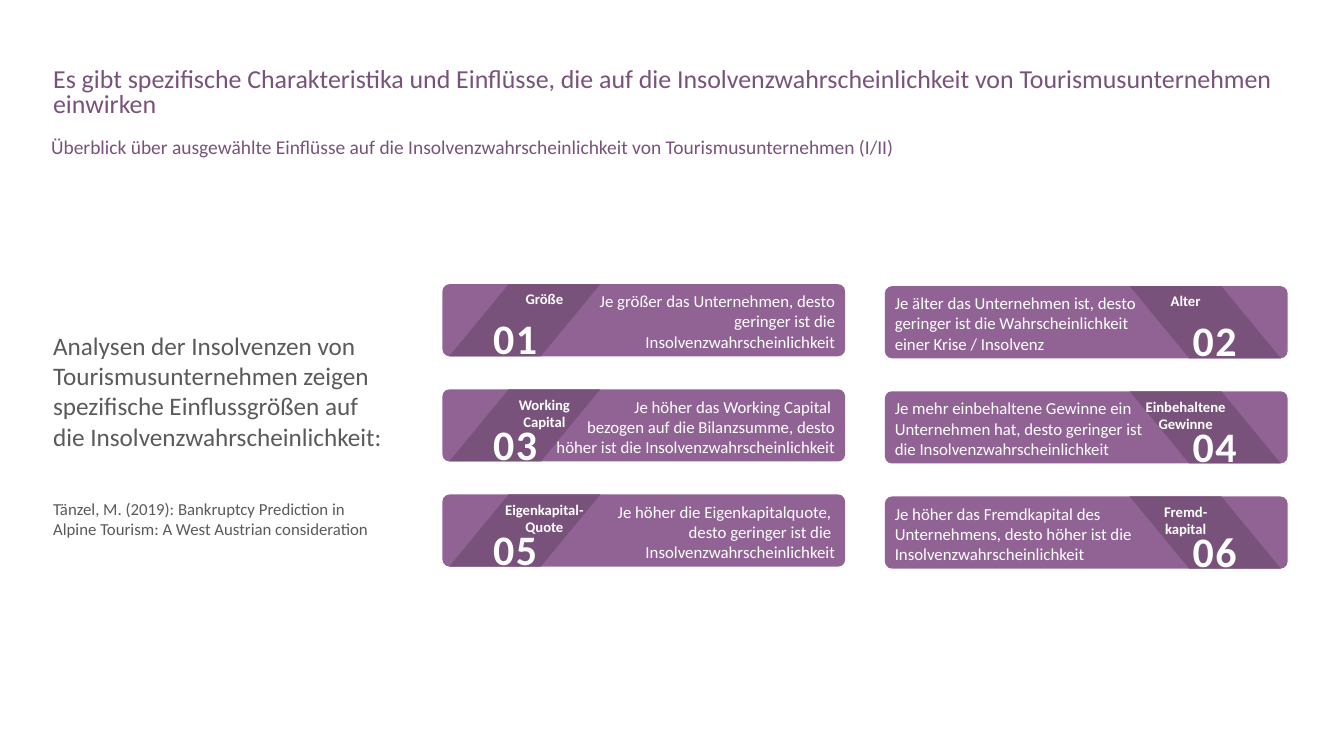
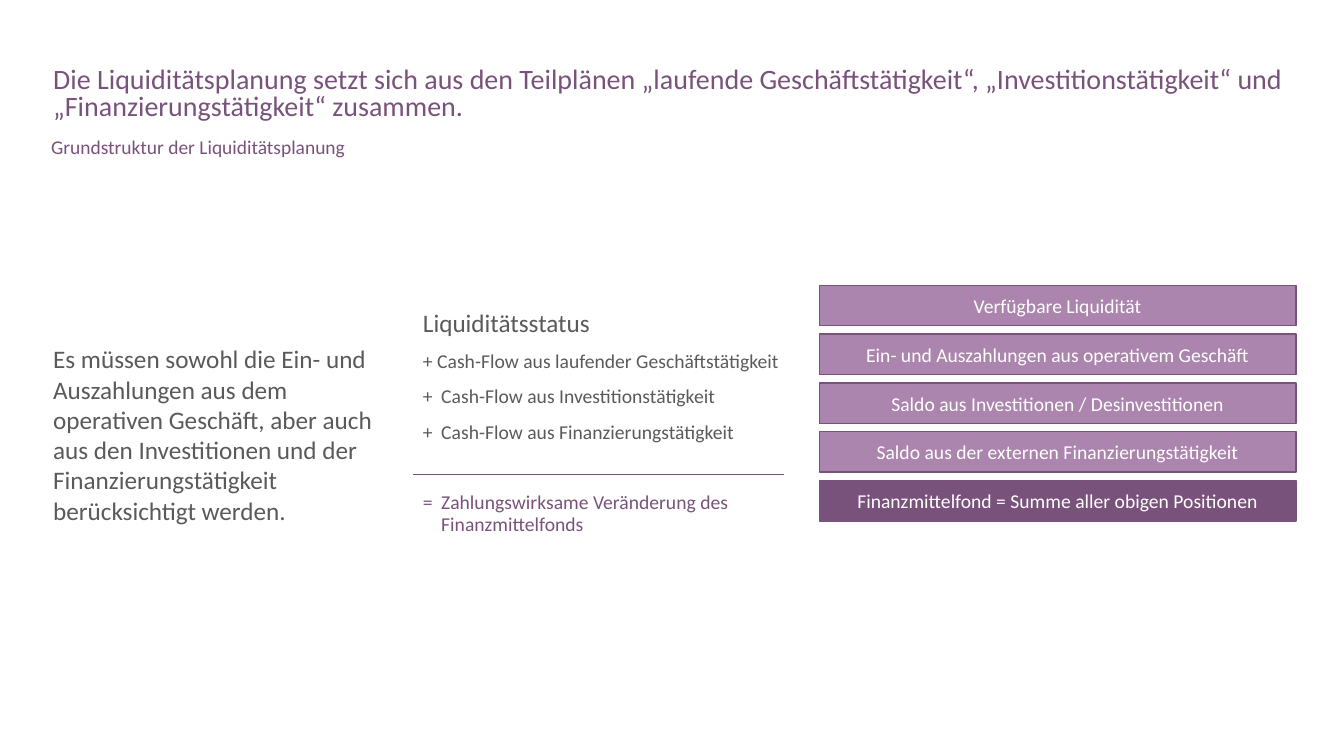
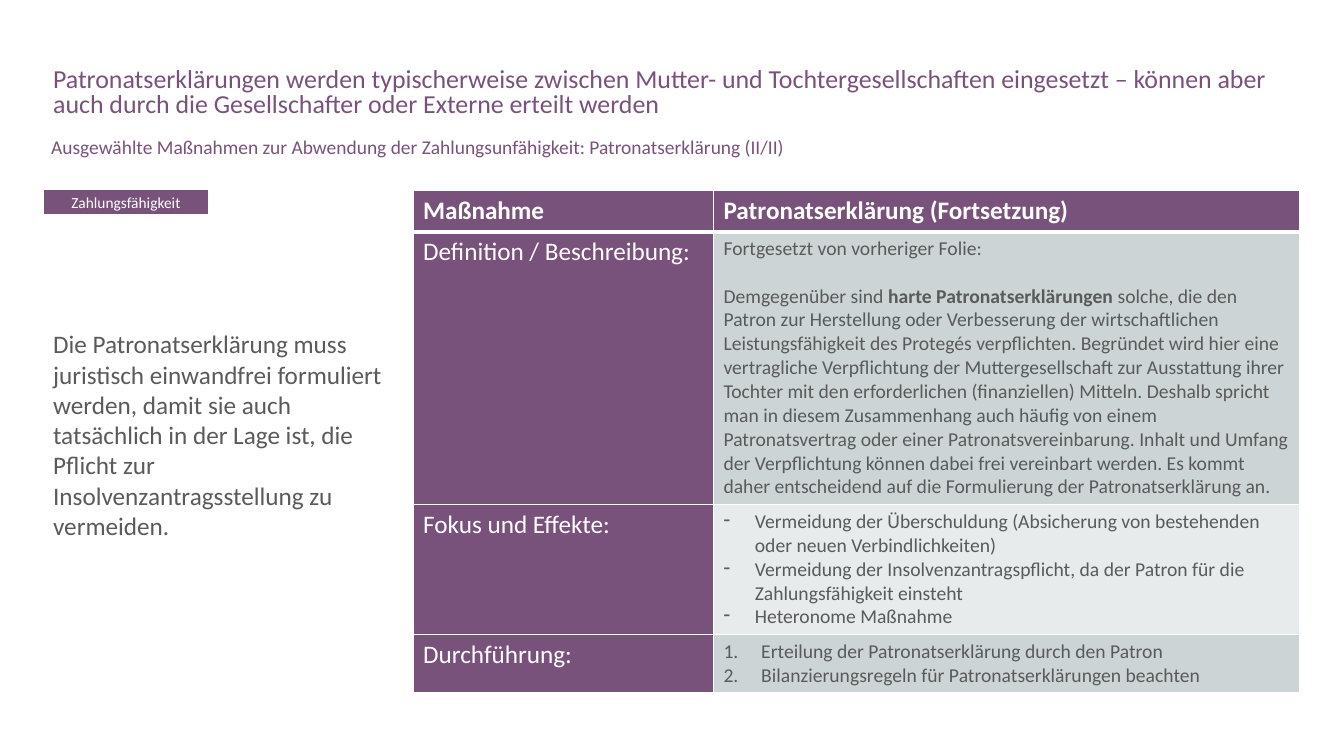
from dataclasses import dataclass
from pptx import Presentation
from pptx.dml.color import RGBColor as Rgb
from pptx.enum.shapes import MSO_CONNECTOR as Link, MSO_SHAPE as Form
from pptx.enum.text import MSO_ANCHOR as Anchor, PP_ALIGN as Align
from pptx.oxml.ns import qn
from pptx.util import Cm, Pt
from lxml.etree import SubElement as Sub


@dataclass(frozen=True)
class Theme:
    face: str = "Calibri"
    dark: str = "79527B"
    mid: str = "916395"
    light: str = "AB85AD"
    ink: str = "595A59"
    white: str = "FFFFFF"
    mist: str = "CCD4D5"
    pale: str = "E7EBEB"
    title: float = 18.5
    large: float = 20
    sub: float = 13.9
    lead: float = 18
    text: float = 14
    small: float = 12
    tag: float = 11
    label: float = 10.5
    digit: float = 30


T = Theme()


def tone(code):
    return Rgb.from_string(code)


def say(par, text, size, ink=T.ink, bold=False, track=None):
    for i, line in enumerate(text.split("\n")):
        if i:
            par.add_line_break()
        run = par.add_run()
        run.text = line
        font = run.font
        font.name, font.size, font.bold = T.face, Pt(size), bold
        font.color.rgb = tone(ink)
        if track:
            run._r.get_or_add_rPr().set("spc", str(track))


def next_par(frame):
    fresh = len(frame.paragraphs) == 1 and not frame.paragraphs[0].runs
    return frame.paragraphs[0] if fresh else frame.add_paragraph()


def hang(par, width):
    props = par._p.get_or_add_pPr()
    props.set("marL", str(Cm(width)))
    props.set("indent", str(-Cm(width)))
    return props


def text_box(slide, box, anchor=Anchor.TOP, pad=True):
    frame = slide.shapes.add_textbox(*map(Cm, box)).text_frame
    frame.word_wrap = True
    frame.vertical_anchor = anchor
    if not pad:
        frame.margin_left = frame.margin_right = 0
        frame.margin_top = frame.margin_bottom = 0
    return frame


def paint(shape, fill, line=None):
    shape.shadow.inherit = False
    shape.fill.solid()
    shape.fill.fore_color.rgb = tone(fill)
    if line:
        shape.line.color.rgb = tone(line)
        shape.line.width = Pt(1)
    else:
        shape.line.fill.background()


def bar(slide, box, text, fill, line, size):
    shape = slide.shapes.add_shape(Form.RECTANGLE, *map(Cm, box))
    paint(shape, fill, line)
    frame = shape.text_frame
    frame.word_wrap = True
    frame.vertical_anchor = Anchor.MIDDLE
    par = frame.paragraphs[0]
    par.alignment = Align.CENTER
    say(par, text, size, T.white)


def base(deck, title, sub, lead, size=T.title):
    slide = deck.slides.add_slide(deck.slide_layouts[6])
    heads = (((1.09, 1.6, 31.85, 1.63), title, size, 0.8),
             ((1.04, 3.43, 31.9, 0.71), sub, T.sub, 0.7))
    for box, text, pts, space in heads:
        par = text_box(slide, box).paragraphs[0]
        par.line_spacing = space
        say(par, text, pts, T.dark)
    side = text_box(slide, (1.09, 4.55, 8.86, 12.8), Anchor.MIDDLE)
    say(side.paragraphs[0], lead, T.lead)
    return slide, side


def card(slide, box, num, label, text, flip):
    x, y, w, h = box

    def from_edge(off, width=0):
        return x + w - off - width if flip else x + off

    plate = slide.shapes.add_shape(Form.ROUNDED_RECTANGLE, *map(Cm, box))
    plate.adjustments[0] = 0.1
    paint(plate, T.mid)

    spots = [(Cm(from_edge(dx)), Cm(y + dy))
             for dx, dy in ((3.98, 0), (1.67, 0), (0.17, h), (2.48, h))]
    pen = slide.shapes.build_freeform(*spots[0])
    pen.add_line_segments(spots[1:], close=True)
    paint(pen.convert_to_shape(), T.dark)

    par = text_box(slide, (from_edge(1.07, 3), y + 0.03, 3, 1.14)).paragraphs[0]
    par.alignment = Align.CENTER
    say(par, label, T.label, T.white, True)

    spot = (from_edge(1.25, 1.17), y + 0.71, 1.17, 1.3)
    par = text_box(slide, spot, Anchor.MIDDLE, False).paragraphs[0]
    par.alignment = Align.CENTER
    say(par, f"{num:02}", T.digit, T.white, True, 110)

    wide = 7.1 if flip else 7.65
    left = x if flip else x + w - wide
    par = text_box(slide, (left, y + 0.05, wide, 1.8)).paragraphs[0]
    par.alignment = Align.LEFT if flip else Align.RIGHT
    say(par, text, T.small, T.white)


def cards(slide, x, y, items):
    for i, (label, text) in enumerate(items):
        row, col = divmod(i, 2)
        box = (x + col * 11.15, y + row * 2.65 + col * 0.05, 10.15, 1.82)
        card(slide, box, i + 1, label, text, col == 1)


def factors(deck):
    slide, side = base(
        deck,
        "Es gibt spezifische Charakteristika und Einflüsse, die auf die Insolvenzwahrscheinlichkeit von Tourismusunternehmen einwirken",
        "Überblick über ausgewählte Einflüsse auf die Insolvenzwahrscheinlichkeit von Tourismusunternehmen (I/II)",
        "Analysen der Insolvenzen von Tourismusunternehmen zeigen spezifische Einflussgrößen auf die Insolvenzwahrscheinlichkeit:")
    par = side.add_paragraph()
    par.space_before = Pt(34)
    say(par, "Tänzel, M. (2019): Bankruptcy Prediction in Alpine Tourism: A West Austrian consideration", T.small)
    cards(slide, 11.15, 7.16, (
        ("Größe", "Je größer das Unternehmen, desto geringer ist die Insolvenzwahrscheinlichkeit"),
        ("Alter", "Je älter das Unternehmen ist, desto geringer ist die Wahrscheinlichkeit einer Krise / Insolvenz"),
        ("Working\nCapital", "Je höher das Working Capital \nbezogen auf die Bilanzsumme, desto höher ist die Insolvenzwahrscheinlichkeit"),
        ("Einbehaltene\nGewinne", "Je mehr einbehaltene Gewinne ein \nUnternehmen hat, desto geringer ist\ndie Insolvenzwahrscheinlichkeit"),
        ("Eigenkapital-\nQuote", "Je höher die Eigenkapitalquote, \ndesto geringer ist die \nInsolvenzwahrscheinlichkeit"),
        ("Fremd-\nkapital", "Je höher das Fremdkapital des\nUnternehmens, desto höher ist die\nInsolvenzwahrscheinlichkeit")))


def status(slide, x, y, w):
    frame = text_box(slide, (x, y, w + 0.6, 6))
    lines = (("Liquiditätsstatus", T.lead, T.ink, 0),
             ("+ Cash-Flow aus laufender Geschäftstätigkeit", T.text, T.ink, 10),
             ("+\tCash-Flow aus Investitionstätigkeit", T.text, T.ink, 10),
             ("+\tCash-Flow aus Finanzierungstätigkeit", T.text, T.ink, 10),
             ("=\tZahlungswirksame Veränderung des\nFinanzmittelfonds", T.text, T.dark, 35.5))
    for text, size, ink, gap in lines:
        par = next_par(frame)
        if "\t" in text:
            hang(par, 0.46)
        par.line_spacing = 0.9
        par.space_before = Pt(gap)
        say(par, text, size, ink)
    rule = slide.shapes.add_connector(
        Link.STRAIGHT, Cm(x), Cm(y + 4.26), Cm(x + w), Cm(y + 4.26))
    rule.line.color.rgb = tone(T.dark)
    rule.line.width = Pt(0.5)
    Sub(rule._element.spPr, qn("a:effectLst"))


def stack(slide, x, y, w, items):
    for i, text in enumerate(items):
        fill = T.dark if i == len(items) - 1 else T.light
        bar(slide, (x, y + i * 1.23, w, 1.02), text, fill, T.dark, T.text)


def planning(deck):
    slide, _ = base(
        deck,
        "Die Liquiditätsplanung setzt sich aus den Teilplänen „laufende Geschäftstätigkeit“, „Investitionstätigkeit“ und „Finanzierungstätigkeit“ zusammen.",
        "Grundstruktur der Liquiditätsplanung",
        "Es müssen sowohl die Ein- und Auszahlungen aus dem operativen Geschäft, aber auch aus den Investitionen und der Finanzierungstätigkeit berücksichtigt werden.",
        T.large)
    status(slide, 10.41, 7.7, 9.35)
    stack(slide, 20.65, 7.19, 12.01, (
        "Verfügbare Liquidität",
        "Ein- und Auszahlungen aus operativem Geschäft",
        "Saldo aus Investitionen / Desinvestitionen",
        "Saldo aus der externen Finanzierungstätigkeit",
        "Finanzmittelfond = Summe aller obigen Positionen"))


def edge(cell, row):
    props = cell._tc.get_or_add_tcPr()
    for side in "LRTB":
        thick = (row, side) in ((0, "B"), (1, "T"))
        line = Sub(props, qn(f"a:ln{side}"), w=str(Pt(3 if thick else 1)))
        Sub(Sub(line, qn("a:solidFill")), qn("a:srgbClr"), val=T.white)


def shade(cell, row, fill):
    edge(cell, row)
    cell.fill.solid()
    cell.fill.fore_color.rgb = tone(fill)


def points(frame, items, width, kind, **mark):
    for text in items:
        par = next_par(frame)
        Sub(hang(par, width), qn(kind), **mark)
        say(par, text, T.text)


def chart_table(slide, x, y):
    wides, highs = (7.57, 14.78), (1.04, 6.88, 3.27, 1.46)
    grid = slide.shapes.add_table(
        4, 2, *map(Cm, (x, y, sum(wides), sum(highs)))).table
    grid.first_row = grid.horz_banding = False
    for col, wide in zip(grid.columns, wides):
        col.width = Cm(wide)
    for row, high in zip(grid.rows, highs):
        row.height = Cm(high)

    heads = ("Maßnahme", "Definition / Beschreibung:", "Fokus und Effekte:", "Durchführung:")
    fills = (T.dark, T.mist, T.pale, T.mist)
    for i, (head, fill) in enumerate(zip(heads, fills)):
        shade(grid.cell(i, 0), i, T.dark)
        shade(grid.cell(i, 1), i, fill)
        say(grid.cell(i, 0).text_frame.paragraphs[0], head, T.lead, T.white, i == 0)

    top, about, focus, steps = (grid.cell(i, 1).text_frame for i in range(4))
    say(top.paragraphs[0], "Patronatserklärung (Fortsetzung)", T.lead, T.white, True)
    par = next_par(about)
    par.space_after = Pt(17)
    say(par, "Fortgesetzt von vorheriger Folie:", T.text)
    par = next_par(about)
    say(par, "Demgegenüber sind ", T.text)
    say(par, "harte Patronatserklärungen ", T.text, bold=True)
    say(par, "solche, die den Patron zur Herstellung oder Verbesserung der wirtschaftlichen "
             "Leistungsfähigkeit des Protegés verpflichten. Begründet wird hier eine vertragliche "
             "Verpflichtung der Muttergesellschaft zur Ausstattung ihrer Tochter mit den "
             "erforderlichen (finanziellen) Mitteln. Deshalb spricht man in diesem Zusammenhang "
             "auch häufig von einem Patronatsvertrag oder einer Patronatsvereinbarung. Inhalt und "
             "Umfang der Verpflichtung können dabei frei vereinbart werden. Es kommt daher "
             "entscheidend auf die Formulierung der Patronatserklärung an.", T.text)
    points(focus, (
        "Vermeidung der Überschuldung (Absicherung von bestehenden oder neuen Verbindlichkeiten)",
        "Vermeidung der Insolvenzantragspflicht, da der Patron für die Zahlungsfähigkeit einsteht",
        "Heteronome Maßnahme"), 0.79, "a:buChar", char="-")
    points(steps, (
        "Erteilung der Patronatserklärung durch den Patron",
        "Bilanzierungsregeln für Patronatserklärungen beachten"),
        0.95, "a:buAutoNum", type="arabicPeriod")


def pledge(deck):
    slide, _ = base(
        deck,
        "Patronatserklärungen werden typischerweise zwischen Mutter- und Tochtergesellschaften eingesetzt – können aber auch durch die Gesellschafter oder Externe erteilt werden",
        "Ausgewählte Maßnahmen zur Abwendung der Zahlungsunfähigkeit: Patronatserklärung (II/II)",
        "Die Patronatserklärung muss juristisch einwandfrei formuliert werden, damit sie auch tatsächlich in der Lage ist, die Pflicht zur Insolvenzantragsstellung zu vermeiden.")
    bar(slide, (1.09, 4.78, 4.17, 0.64), "Zahlungsfähigkeit", T.dark, T.white, T.tag)
    chart_table(slide, 10.41, 4.8)


def main():
    deck = Presentation()
    deck.slide_width, deck.slide_height = Cm(33.87), Cm(19.05)
    for build in (factors, planning, pledge):
        build(deck)
    deck.save("out.pptx")


if __name__ == "__main__":
    main()
